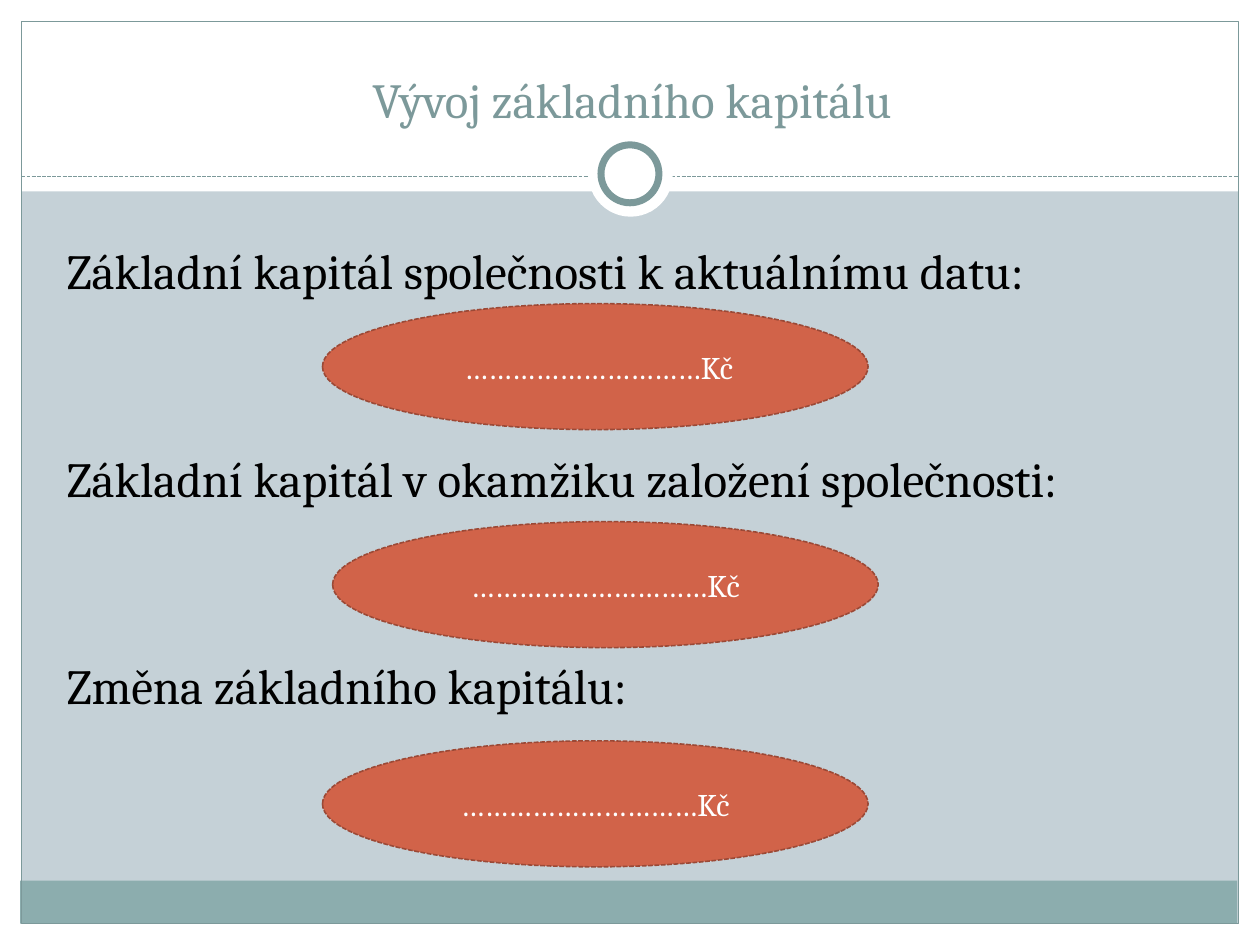
"""Build the slide on the development of share capital."""
from dataclasses import dataclass
from typing import Optional

from lxml import etree
from pptx import Presentation
from pptx import util as u
from pptx.dml.color import RGBColor
from pptx.enum import dml, shapes, text
from pptx.oxml.ns import qn

WHITE = RGBColor(0xFF, 0xFF, 0xFF)
BLACK = RGBColor(0, 0, 0)
BACKGROUND = RGBColor(0xC5, 0xD1, 0xD7)
TEAL = RGBColor(0x7C, 0x99, 0x9A)
FOOTER = RGBColor(0x8C, 0xAD, 0xAE)
ORANGE = RGBColor(0xD1, 0x63, 0x49)
RUST = RGBColor(0x9B, 0x49, 0x36)
FONT = "Cambria"
AMOUNT = "…………………………Kč"
RECT = shapes.MSO_SHAPE.RECTANGLE
OVAL = shapes.MSO_SHAPE.OVAL


@dataclass
class Box:
    left: float
    top: float
    width: float
    height: float
    fill: Optional[RGBColor] = WHITE
    line: Optional[RGBColor] = None
    weight: float = 0.75
    kind: shapes.MSO_SHAPE = RECT


@dataclass
class Amount:
    left: float
    top: float
    label: str = AMOUNT


FRAME = [
    Box(0, 7.33, 10, 0.17),
    Box(0, 0, 10, 1.52),
    Box(0, 0, 0.17, 7.5),
    Box(9.83, 0, 0.17, 7.5),
    Box(0.16, 6.99, 9.66, 0.34, FOOTER),
    Box(0.17, 0.17, 9.66, 7.16, None, TEAL),
]
RING = [
    Box(4.67, 1.05, 0.67, 0.67, kind=OVAL),
    Box(4.77, 1.15, 0.46, 0.46, line=TEAL, weight=4, kind=OVAL),
]
AMOUNTS = [Amount(2.56, 2.41, " " + AMOUNT), Amount(2.64, 4.14), Amount(2.56, 5.88)]
HEADINGS = [
    "Základní kapitál společnosti k aktuálnímu datu:",
    "Základní kapitál v okamžiku založení společnosti:",
    "Změna základního kapitálu:",
]


def place(sp, left: float, top: float, width: float, height: float) -> None:
    """Set the position and size of a shape in inches."""
    sp.left, sp.top = u.Inches(left), u.Inches(top)
    sp.width, sp.height = u.Inches(width), u.Inches(height)


def write(p, words: str, size: float = 28, color: RGBColor = BLACK,
          align=text.PP_ALIGN.CENTER, before: float = 0) -> None:
    """Write one formatted run into a paragraph."""
    p.alignment, p.space_before = align, u.Pt(before)
    r = p.add_run()
    r.text = words
    r.font.name, r.font.size = FONT, u.Pt(size)
    r.font.color.rgb = color


def draw_box(s, box: Box):
    """Draw a preset shape without shadow."""
    sp = s.shapes.add_shape(box.kind, u.Inches(box.left), u.Inches(box.top),
                            u.Inches(box.width), u.Inches(box.height))
    sp.shadow.inherit = False
    if box.fill is None:
        sp.fill.background()
    else:
        sp.fill.solid()
        sp.fill.fore_color.rgb = box.fill
    if box.line is None:
        sp.line.fill.background()
    else:
        sp.line.color.rgb = box.line
        sp.line.width = u.Pt(box.weight)
    return sp


def draw_rule(s, left: float, right: float, y: float) -> None:
    """Draw the dashed rule under the title."""
    c = s.shapes.add_connector(shapes.MSO_CONNECTOR.STRAIGHT, u.Inches(left),
                               u.Inches(y), u.Inches(right), u.Inches(y))
    c.line.color.rgb, c.line.width = TEAL, u.Pt(0.75)
    c.line.dash_style = dml.MSO_LINE.SQUARE_DOT
    etree.SubElement(c.element.spPr, qn("a:effectLst"))


def draw_amount(s, amount: Amount) -> None:
    """Draw an ellipse with a blank amount to fill in."""
    sp = draw_box(s, Box(amount.left, amount.top, 4.33, 1, ORANGE, RUST, 0.9, OVAL))
    sp.line.dash_style = dml.MSO_LINE.SQUARE_DOT
    tf = sp.text_frame
    tf.vertical_anchor = text.MSO_ANCHOR.MIDDLE
    write(tf.paragraphs[0], amount.label, size=18, color=WHITE)


def fill_title(sp) -> None:
    """Place and write the title."""
    place(sp, 0.35, 0.28, 9.33, 0.79)
    tf = sp.text_frame
    tf.vertical_anchor = text.MSO_ANCHOR.BOTTOM
    write(tf.paragraphs[0], "Vývoj základního kapitálu", color=TEAL)


def fill_body(sp) -> None:
    """Place the body and write evenly spaced headings without bullets."""
    place(sp, 0.43, 1.31, 9, 5.83)
    tf = sp.text_frame
    tf.margin_top = u.Inches(0.6)
    tf.auto_size = text.MSO_AUTO_SIZE.NONE
    for i, heading in enumerate(HEADINGS):
        p = tf.add_paragraph() if i else tf.paragraphs[0]
        write(p, heading, align=text.PP_ALIGN.LEFT, before=85 if i else 0)
        pPr = p._p.get_or_add_pPr()
        pPr.set("marL", "0")
        pPr.set("indent", "0")
        etree.SubElement(pPr, qn("a:buNone"))


def main() -> None:
    """Build and save the slide."""
    prs = Presentation()
    prs.slide_width, prs.slide_height = u.Inches(10), u.Inches(7.5)
    s = prs.slides.add_slide(prs.slide_layouts[1])
    s.background.fill.solid()
    s.background.fill.fore_color.rgb = BACKGROUND
    title, body = s.placeholders
    for box in FRAME:
        draw_box(s, box)
    draw_rule(s, 0.17, 9.83, 1.4)
    for box in RING:
        draw_box(s, box)
    fill_title(title)
    fill_body(body)
    for sp in (title, body):
        s.shapes.element.append(sp.element)
    for amount in AMOUNTS:
        draw_amount(s, amount)
    prs.save("out.pptx")


if __name__ == "__main__":
    main()
